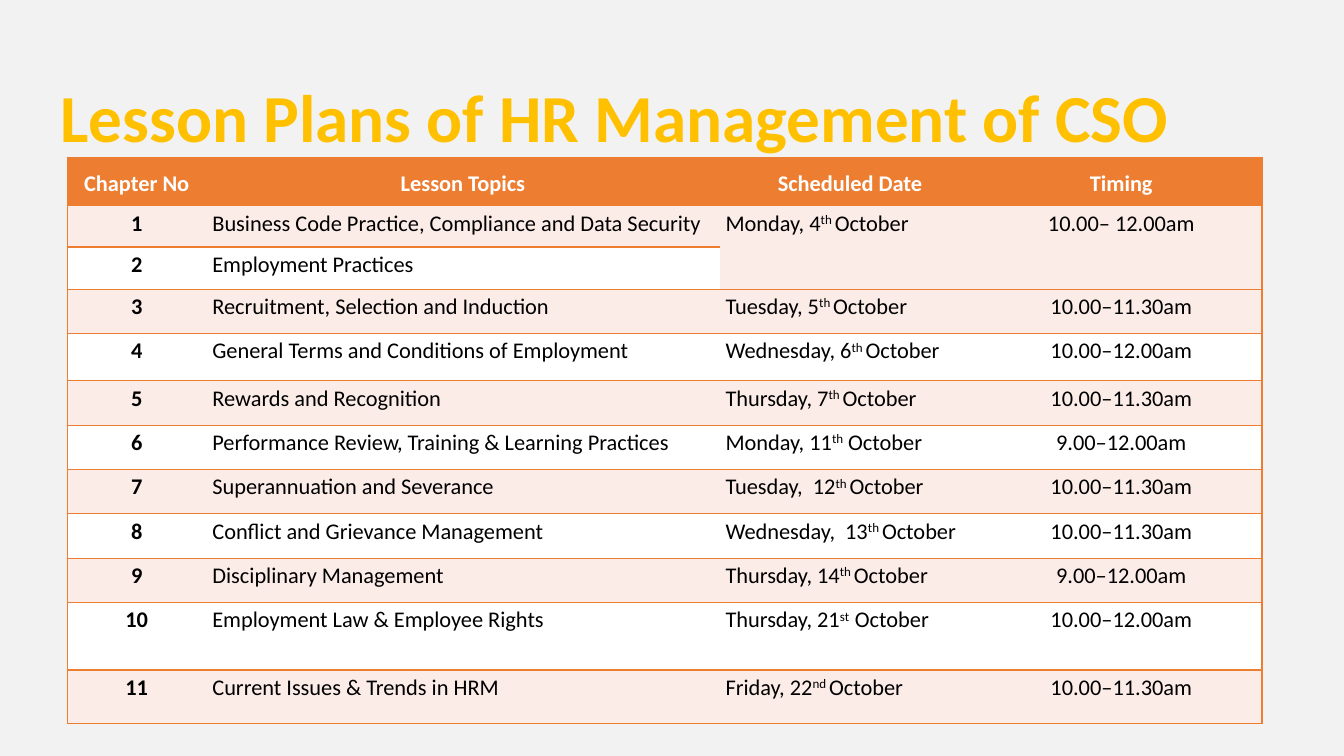
from dataclasses import dataclass

from lxml import etree
from pptx import Presentation
from pptx import util as u
from pptx.dml.color import RGBColor
from pptx.enum import text
from pptx.oxml.ns import qn


@dataclass(frozen=True)
class Theme:
    font: str = "Calibri"
    title_size: int = 48
    table_size: int = 16
    backdrop: str = "F2F2F2"
    title: str = "FFC000"
    accent: str = "ED7D31"
    header_text: str = "FFFFFF"
    body_text: str = "000000"
    bands: tuple = ("FFFFFF", "FCECE8")


THEME = Theme()
WIDTH, HEIGHT = u.Inches(13.33), u.Inches(7.5)
PLAIN_STYLE = "{2D5ABB26-0587-4C30-8999-92F81FD0307C}"

# Table grid, in inches
COLUMNS = (1.38, 5.09, 2.59, 2.79)
ROWS = (0.48, 0.41, 0.42, 0.44, 0.47) + (0.44,) * 5 + (0.67, 0.53)

HEADINGS = ("Chapter No", "Lesson Topics", "Scheduled Date", "Timing")
# Topic, date (day|raised suffix|month), timing; a lesson without a date
# shares the slot of the lesson above it.
LESSONS = (
    ("Business Code Practice, Compliance and Data Security",
     "Monday, 4|th |October", "10.00– 12.00am"),
    ("Employment Practices", "", ""),
    ("Recruitment, Selection and Induction",
     "Tuesday, 5|th |October", "10.00–11.30am"),
    ("General Terms and Conditions of Employment",
     "Wednesday, 6|th |October", "10.00–12.00am"),
    ("Rewards and Recognition", "Thursday, 7|th |October", "10.00–11.30am"),
    ("Performance Review, Training & Learning Practices",
     "Monday, 11|th| October", "9.00–12.00am"),
    ("Superannuation and Severance",
     "Tuesday,  12|th |October", "10.00–11.30am"),
    ("Conflict and Grievance Management",
     "Wednesday,  13|th |October", "10.00–11.30am"),
    ("Disciplinary Management", "Thursday, 14|th |October", "9.00–12.00am"),
    ("Employment Law & Employee Rights",
     "Thursday, 21|st  |October", "10.00–12.00am"),
    ("Current Issues & Trends in HRM",
     "Friday, 22|nd |October", "10.00–11.30am"),
)


def style_font(font, size, color, bold):
    font.name = THEME.font
    font.size = u.Pt(size)
    font.bold = bold
    font.color.rgb = RGBColor.from_string(color)


def add_title(slide, wording):
    title = slide.shapes.title
    title.left, title.top = int(WIDTH * 0.045), int(HEIGHT * 0.099)
    title.width, title.height = int(WIDTH * 0.9), int(HEIGHT * 0.108)
    frame = title.text_frame
    frame.margin_left = frame.margin_right = 0
    frame.margin_top = frame.margin_bottom = 0
    frame.vertical_anchor = text.MSO_ANCHOR.TOP
    frame.auto_size = text.MSO_AUTO_SIZE.NONE
    frame.text = wording
    heading = frame.paragraphs[0]
    heading.alignment = text.PP_ALIGN.LEFT
    style_font(heading.font, THEME.title_size, THEME.title, True)


def add_borders(cell, sides):
    properties = cell._tc.get_or_add_tcPr()
    for side in sides:
        line = etree.SubElement(properties, qn(f"a:ln{side}"), w=str(u.Pt(1)))
        solid = etree.SubElement(line, qn("a:solidFill"))
        etree.SubElement(solid, qn("a:srgbClr"), val=THEME.accent)


def write_runs(paragraph, wording):
    """Write the parts between bars, raising every second one."""
    for index, part in enumerate(wording.split("|")):
        run = paragraph.add_run()
        run.text = part
        if index % 2:
            run._r.get_or_add_rPr().set("baseline", "30000")


def fill_cell(cell, wording, row, column):
    header = row == 0
    last = len(COLUMNS) - 1
    add_borders(cell, {0: "LTB", last: "RTB"}.get(column, "TB"))
    cell.fill.solid()
    cell.fill.fore_color.rgb = RGBColor.from_string(
        THEME.accent if header else THEME.bands[row % 2])
    cell.margin_left = cell.margin_right = u.Inches(0.06)
    cell.margin_top = cell.margin_bottom = 0
    cell.vertical_anchor = (
        text.MSO_ANCHOR.MIDDLE if header else text.MSO_ANCHOR.TOP)
    paragraph = cell.text_frame.paragraphs[0]
    centred = header or column in (0, last)
    paragraph.alignment = (
        text.PP_ALIGN.CENTER if centred else text.PP_ALIGN.LEFT)
    paragraph.line_spacing = 1.15
    style_font(paragraph.font, THEME.table_size,
               THEME.header_text if header else THEME.body_text,
               header or column == 0)
    if wording:
        write_runs(paragraph, wording)


def add_schedule(slide):
    frame = slide.shapes.add_table(
        len(ROWS), len(COLUMNS), int(WIDTH * 0.05), int(HEIGHT * 0.208),
        u.Inches(sum(COLUMNS)), u.Inches(sum(ROWS)))
    table = frame.table
    table._tbl.tblPr.find(qn("a:tableStyleId")).text = PLAIN_STYLE
    for column, width in zip(table.columns, COLUMNS):
        column.width = u.Inches(width)
    for row, height in zip(table.rows, ROWS):
        row.height = u.Inches(height)

    numbered = [(str(number), *lesson)
                for number, lesson in enumerate(LESSONS, 1)]
    for row, entries in enumerate([HEADINGS, *numbered]):
        for column, wording in enumerate(entries):
            cell = table.cell(row, column)
            fill_cell(cell, wording, row, column)
            if not wording:
                table.cell(row - 1, column).merge(cell)


def main():
    deck = Presentation()
    deck.slide_width, deck.slide_height = WIDTH, HEIGHT
    slide = deck.slides.add_slide(deck.slide_layouts.get_by_name("Title Only"))
    slide.background.fill.solid()
    slide.background.fill.fore_color.rgb = RGBColor.from_string(THEME.backdrop)
    add_title(slide, "Lesson Plans of HR Management of CSO")
    add_schedule(slide)
    deck.save("out.pptx")


if __name__ == "__main__":
    main()
